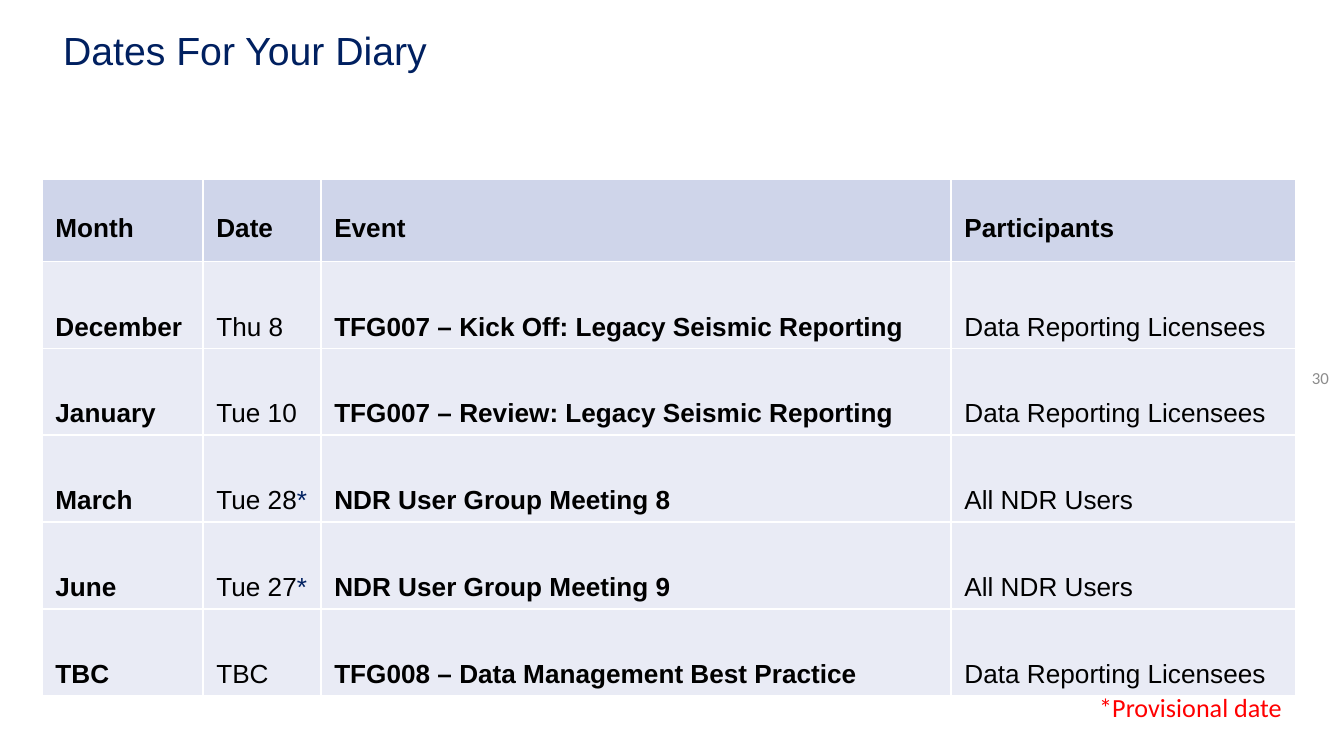
from lxml import etree
from pptx import Presentation
from pptx.dml.color import RGBColor
from pptx.enum.text import MSO_ANCHOR, PP_ALIGN
from pptx.oxml.ns import qn
from pptx.util import Pt

MIDDLE, TOP = MSO_ANCHOR.MIDDLE, MSO_ANCHOR.TOP
LEFT, RIGHT = PP_ALIGN.LEFT, PP_ALIGN.RIGHT

NAVY = RGBColor(0x00, 0x20, 0x60)
BLACK = RGBColor(0x00, 0x00, 0x00)
GREY = RGBColor(0x8C, 0x8C, 0x8C)
RED = RGBColor(0xFF, 0x00, 0x00)
HEADER_FILL = RGBColor(0xCF, 0xD5, 0xEA)
BODY_FILL = RGBColor(0xE9, 0xEB, 0xF5)

TITLE = "Dates For Your Diary"
PAGE_NUMBER = "30"
FOOTNOTE = "*Provisional date"
HEADER = ("Month", "Date", "Event", "Participants")
EVENTS = [
    ("December", "Thu 8", "TFG007 – Kick Off: Legacy Seismic Reporting",
     "Data Reporting Licensees"),
    ("January", "Tue 10", "TFG007 – Review: Legacy Seismic Reporting",
     "Data Reporting Licensees"),
    ("March", "Tue 28*", "NDR User Group Meeting 8", "All NDR Users"),
    ("June", "Tue 27*", "NDR User Group Meeting 9", "All NDR Users"),
    ("TBC", "TBC", "TFG008 – Data Management Best Practice",
     "Data Reporting Licensees"),
]
BOLD_COLUMNS = (0, 2)
COLUMN_WIDTHS = (86.2, 63.2, 337.6, 185)
HEADER_HEIGHT, ROW_HEIGHT = 44, 46.5
CELL_MARGIN = 2.2
TABLE_LEFT, TABLE_TOP = 22.5, 96.2


def style_run(r, font, size, color, bold=False):
    r.font.name, r.font.size, r.font.bold = font, Pt(size), bold
    r.font.color.rgb = color


def place_text(sp, box, text, font, size, color, align=LEFT, anchor=MIDDLE):
    sp.left, sp.top, sp.width, sp.height = (Pt(v) for v in box)
    tf = sp.text_frame
    tf.text = text
    tf.word_wrap = True
    tf.vertical_anchor = anchor
    p = tf.paragraphs[0]
    p.alignment = align
    style_run(p.runs[0], font, size, color)
    return tf


def add_white_borders(cell):
    tcPr = cell._tc.get_or_add_tcPr()
    for side in ("a:lnL", "a:lnR", "a:lnT", "a:lnB"):
        ln = etree.SubElement(tcPr, qn(side), w=str(Pt(1)))
        fill = etree.SubElement(ln, qn("a:solidFill"))
        etree.SubElement(fill, qn("a:srgbClr"), val="FFFFFF")


def fill_cell(cell, text, fill, bold, spacing):
    """Format one cell; a trailing asterisk becomes a navy run."""
    add_white_borders(cell)
    cell.fill.solid()
    cell.fill.fore_color.rgb = fill
    cell.vertical_anchor = MIDDLE
    cell.margin_top = cell.margin_bottom = Pt(CELL_MARGIN)
    p = cell.text_frame.paragraphs[0]
    p.line_spacing = spacing
    label = text.rstrip("*")
    for part, color in ((label, BLACK), (text[len(label):], NAVY)):
        if part:
            r = p.add_run()
            r.text = part
            style_run(r, "Arial", 14, color, bold)


prs = Presentation()
prs.slide_width, prs.slide_height = Pt(720), Pt(405)
slide = prs.slides.add_slide(prs.slide_layouts[5])
shapes = slide.shapes

tf = place_text(shapes.title, (33.8, 15.3, 419, 29.5), TITLE, "Arial", 21, NAVY)
tf.margin_left = tf.margin_top = 0
tf.paragraphs[0].line_spacing = 0.9

place_text(shapes.add_textbox(0, 0, 0, 0), (670, 189.4, 49, 26),
           PAGE_NUMBER, "Calibri", 9, GREY, align=RIGHT)

rows = [HEADER] + EVENTS
table = shapes.add_table(
    len(rows), len(HEADER), Pt(TABLE_LEFT), Pt(TABLE_TOP),
    Pt(sum(COLUMN_WIDTHS)), Pt(HEADER_HEIGHT + ROW_HEIGHT * len(EVENTS))).table
table.first_row = table.horz_banding = False
for column, width in zip(table.columns, COLUMN_WIDTHS):
    column.width = Pt(width)
for i, row in enumerate(rows):
    is_header = i == 0
    table.rows[i].height = Pt(HEADER_HEIGHT if is_header else ROW_HEIGHT)
    for j, text in enumerate(row):
        fill_cell(table.cell(i, j), text,
                  HEADER_FILL if is_header else BODY_FILL,
                  is_header or j in BOLD_COLUMNS,
                  1.5 if is_header else 2.5)

place_text(shapes.add_textbox(0, 0, 0, 0), (581.8, 367, 124, 24.5),
           FOOTNOTE, "Calibri", 14, RED, anchor=TOP)

prs.save("out.pptx")
